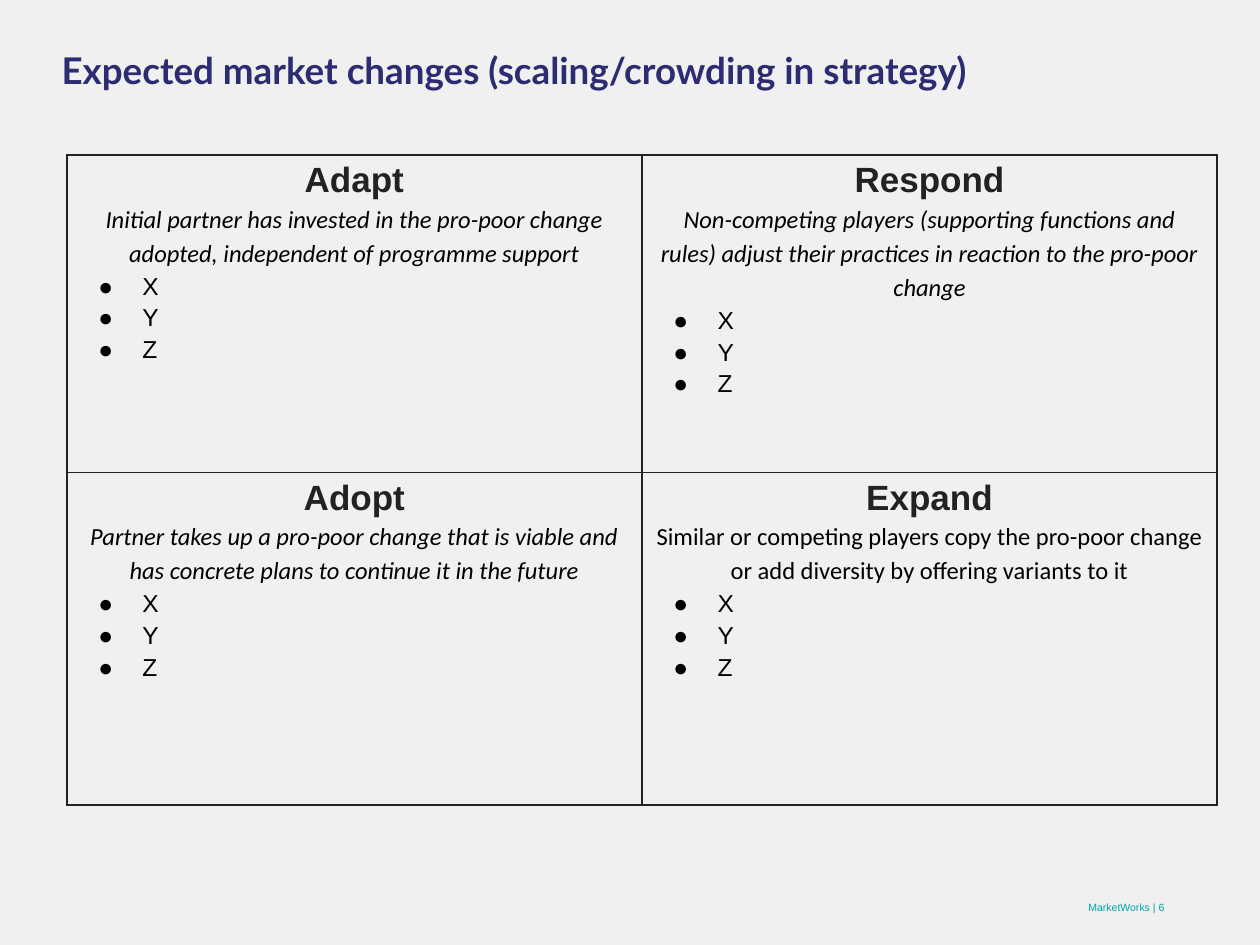
"""Build the expected market changes slide with its four-quadrant table."""
from lxml.etree import SubElement
from pptx import Presentation
from pptx.dml.color import RGBColor
from pptx.enum.text import MSO_ANCHOR as Anchor, PP_ALIGN as Align
from pptx.oxml.ns import qn
from pptx.util import Inches, Pt

PAPER = RGBColor(0xF0, 0xF0, 0xF0)
NAVY = RGBColor(0x2B, 0x2C, 0x71)
TEAL = RGBColor(0x00, 0xA5, 0xA3)
CHARCOAL = RGBColor(0x22, 0x22, 0x22)
BLACK = RGBColor(0x00, 0x00, 0x00)

QUADRANTS = [
    [
        ("Adapt", "Initial partner has invested in the pro-poor change adopted, "
                  "independent of programme support", True),
        ("Respond", "Non-competing players (supporting functions and rules) adjust "
                    "their practices in reaction to the pro-poor change", True),
    ],
    [
        ("Adopt", "Partner takes up a pro-poor change that is viable and has "
                  "concrete plans to continue it in the future", True),
        ("Expand", "Similar or competing players copy the pro-poor change or add "
                   "diversity by offering variants to it", False),
    ],
]
ITEMS = ["X", "Y", "Z"]


class MarketSlide:
    """Holds the slide style and draws each kind of element."""

    body_size = 14
    line_spacing = 1.15

    def __init__(self, deck):
        self.page = deck.slides.add_slide(deck.slide_layouts[6])
        self.page.background.fill.solid()
        self.page.background.fill.fore_color.rgb = PAPER

    def span(self, para, text, size, color, font="Arial", bold=False, italic=False):
        span = para.add_run()
        span.text = text
        span.font.name = font
        span.font.size = Pt(size)
        span.font.bold = bold
        span.font.italic = italic
        span.font.color.rgb = color

    def text(self, left, top, width, height, words, size, color,
             align=Align.LEFT, anchor=Anchor.TOP, **style):
        box = self.page.shapes.add_textbox(
            Inches(left), Inches(top), Inches(width), Inches(height))
        frame = box.text_frame
        frame.word_wrap = True
        frame.vertical_anchor = anchor
        para = frame.paragraphs[0]
        para.alignment = align
        self.span(para, words, size, color, **style)

    def bullet(self, para):
        props = para._p.get_or_add_pPr()
        props.set("marL", str(Inches(0.5)))
        props.set("indent", str(Inches(-0.35)))
        color = SubElement(props, qn("a:buClr"))
        SubElement(color, qn("a:srgbClr"), val=str(BLACK))
        SubElement(props, qn("a:buFont"), typeface="Arial")
        SubElement(props, qn("a:buChar"), char="●")

    def borders(self, cell):
        props = cell._tc.get_or_add_tcPr()
        for index, side in enumerate(("lnL", "lnR", "lnT", "lnB")):
            line = SubElement(props, qn(f"a:{side}"), w=str(Pt(1)))
            fill = SubElement(line, qn("a:solidFill"))
            SubElement(fill, qn("a:srgbClr"), val=str(CHARCOAL))
            props.insert(index, line)

    def quadrant(self, cell, heading, summary, italic):
        cell.fill.solid()
        cell.fill.fore_color.rgb = PAPER
        self.borders(cell)
        frame = cell.text_frame
        para = frame.paragraphs[0]
        para.alignment = Align.CENTER
        self.span(para, heading, 20, CHARCOAL, bold=True)
        para = frame.add_paragraph()
        para.alignment = Align.CENTER
        para.line_spacing = self.line_spacing
        self.span(para, summary, self.body_size, BLACK, font="Calibri", italic=italic)
        for item in ITEMS:
            para = frame.add_paragraph()
            para.line_spacing = self.line_spacing
            self.bullet(para)
            self.span(para, item, self.body_size, BLACK)

    def table(self, left, top, width, heights, rows):
        count = len(rows[0])
        table = self.page.shapes.add_table(
            len(rows), count, Inches(left), Inches(top),
            Inches(width), Inches(sum(heights))).table
        table.first_row = False
        table.horz_banding = False
        for row, height, contents in zip(table.rows, heights, rows):
            row.height = Inches(height)
            for cell, content in zip(row.cells, contents):
                self.quadrant(cell, *content)


def main():
    deck = Presentation()
    deck.slide_width = Inches(10)
    deck.slide_height = Inches(7.5)
    slide = MarketSlide(deck)
    slide.text(0.39, 0.33, 8.87, 0.58,
               "Expected market changes (scaling/crowding in strategy)",
               21, NAVY, font="Lato", bold=True)
    slide.text(7.01, 7, 2.33, 0.4, "MarketWorks | 6", 6, TEAL,
               align=Align.RIGHT, anchor=Anchor.MIDDLE)
    slide.table(0.53, 1.23, 9.13, [2.52, 2.64], QUADRANTS)
    deck.save("out.pptx")


if __name__ == "__main__":
    main()
